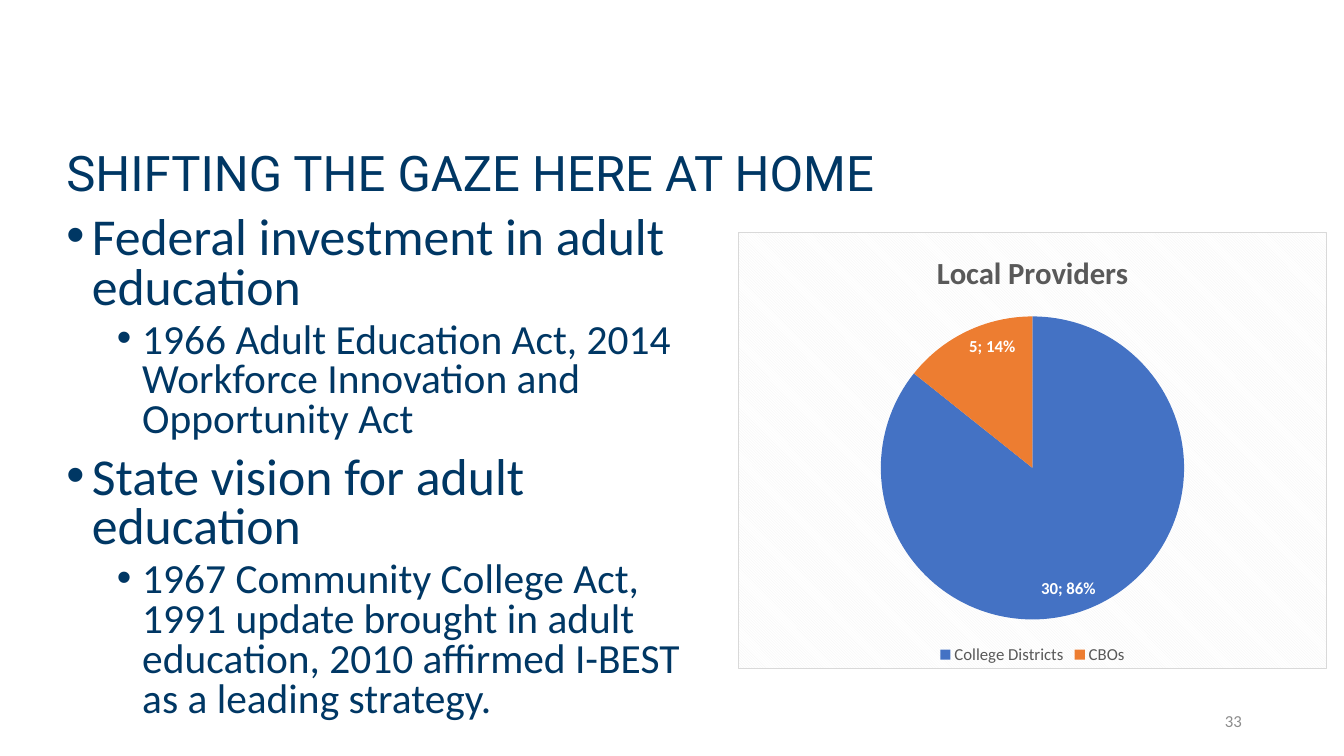
import pptx
import pptx.chart.data
import pptx.dml.color
import pptx.enum.chart
import pptx.enum.text
import pptx.oxml
import pptx.oxml.ns
import pptx.util
from pptx.util import Cm

COLOURS = {
    "navy": "003764",
    "number": "8C8C8C",
    "chart text": "595959",
    "label": "FFFFFF",
    "College Districts": "4472C4",
    "CBOs": "ED7D31",
    "stripe": "F2F2F2",
    "border": "D9D9D9",
}


def colour(name):
    return pptx.dml.color.RGBColor.from_string(COLOURS[name])


def set_font(font, size, colour_name, family="Calibri", bold=False):
    font.size = pptx.util.Pt(size)
    font.name = family
    font.bold = bold
    font.color.rgb = colour(colour_name)


deck = pptx.Presentation()
deck.slide_width, deck.slide_height = Cm(33.87), Cm(19.05)
page = deck.slides.add_slide(deck.slide_layouts[1])

# Title
title = page.shapes.title
title.left, title.top, title.width, title.height = Cm(1.42), Cm(3.63), Cm(29.21), Cm(3.07)
title.text_frame.text = "SHIFTING THE GAZE HERE AT HOME"
title.text_frame.vertical_anchor = pptx.enum.text.MSO_ANCHOR.TOP
title.text_frame.auto_size = pptx.enum.text.MSO_AUTO_SIZE.NONE
para = title.text_frame.paragraphs[0]
para.alignment = pptx.enum.text.PP_ALIGN.LEFT
para.line_spacing = 0.9
set_font(para.runs[0].font, 35, "navy", "Roboto")

# Bulleted list
points = [
    (0, "Federal investment in adult education"),
    (1, "1966 Adult Education Act, 2014 Workforce Innovation and Opportunity Act"),
    (0, "State vision for adult education"),
    (1, "1967 Community College Act, 1991 update brought in adult education, "
        "2010 affirmed I-BEST as a leading strategy."),
]
level_styles = [(37, 10, 0.64), (29.6, 5, 1.91)]  # size, space before, indent
body = page.placeholders[1]
body.left, body.top, body.width, body.height = Cm(1.42), Cm(5.31), Cm(16.41), Cm(13.36)
body.text_frame.text = "\n".join(text for level, text in points)
body.text_frame.auto_size = pptx.enum.text.MSO_AUTO_SIZE.NONE
for para, (level, text) in zip(body.text_frame.paragraphs, points):
    size, space_before, indent = level_styles[level]
    para.level = level
    para.line_spacing = 0.8
    para.space_before = pptx.util.Pt(space_before)
    set_font(para.runs[0].font, size, "navy")
    properties = para._p.get_or_add_pPr()
    properties.set("marL", str(Cm(indent)))
    properties.set("indent", str(-Cm(0.64)))
    properties.append(pptx.oxml.parse_xml(
        f'<a:buChar {pptx.oxml.ns.nsdecls("a")} char="•"/>'))

# Slide number
number = page.shapes.add_textbox(Cm(23.93), Cm(17.65), Cm(7.62), Cm(1.02))
number.text_frame.word_wrap = True
number.text_frame.vertical_anchor = pptx.enum.text.MSO_ANCHOR.MIDDLE
number.text_frame.text = "33"
para = number.text_frame.paragraphs[0]
para.alignment = pptx.enum.text.PP_ALIGN.RIGHT
set_font(para.runs[0].font, 12, "number")

# Pie chart
data = pptx.chart.data.CategoryChartData()
data.categories = ["College Districts", "CBOs"]
data.add_series("Local Providers", [30, 5])
chart = page.shapes.add_chart(
    pptx.enum.chart.XL_CHART_TYPE.PIE, Cm(18.59), Cm(5.84), Cm(14.86), Cm(11.02), data).chart
chart.font.name = "Calibri"
chart.font.size = pptx.util.Pt(10)
chart.has_title = True
chart.chart_title.include_in_layout = False
chart.chart_title.text_frame.text = "Local Providers"
set_font(chart.chart_title.text_frame.paragraphs[0].runs[0].font, 22, "chart text", bold=True)
chart.has_legend = True
chart.legend.position = pptx.enum.chart.XL_LEGEND_POSITION.BOTTOM
chart.legend.include_in_layout = False
set_font(chart.legend.font, 12, "chart text")

# Slices and their labels
plot = chart.plots[0]
plot.vary_by_categories = True
for index, category in enumerate(plot.categories):
    fill = plot.series[0].points[index].format.fill
    fill.solid()
    fill.fore_color.rgb = colour(category)
labels = plot.series[0].data_labels
labels.show_value = True
labels.show_percentage = True
labels.position = pptx.enum.chart.XL_LABEL_POSITION.INSIDE_END
set_font(labels.font, 12, "label", bold=True)
separator = pptx.oxml.parse_xml(
    f'<c:separator {pptx.oxml.ns.nsdecls("c")}>; </c:separator>')
labels._element.find(pptx.oxml.ns.qn("c:showBubbleSize")).addnext(separator)

# Striped chart background with a thin border
background = pptx.oxml.parse_xml(
    f'<c:spPr {pptx.oxml.ns.nsdecls("c", "a")}><a:pattFill prst="dkDnDiag">'
    f'<a:fgClr><a:srgbClr val="{COLOURS["stripe"]}"/></a:fgClr>'
    f'<a:bgClr><a:srgbClr val="{COLOURS["label"]}"/></a:bgClr></a:pattFill>'
    f'<a:ln w="9525"><a:solidFill><a:srgbClr val="{COLOURS["border"]}"/></a:solidFill></a:ln>'
    '</c:spPr>')
chart._chartSpace.find(pptx.oxml.ns.qn("c:chart")).addnext(background)

deck.save("out.pptx")
